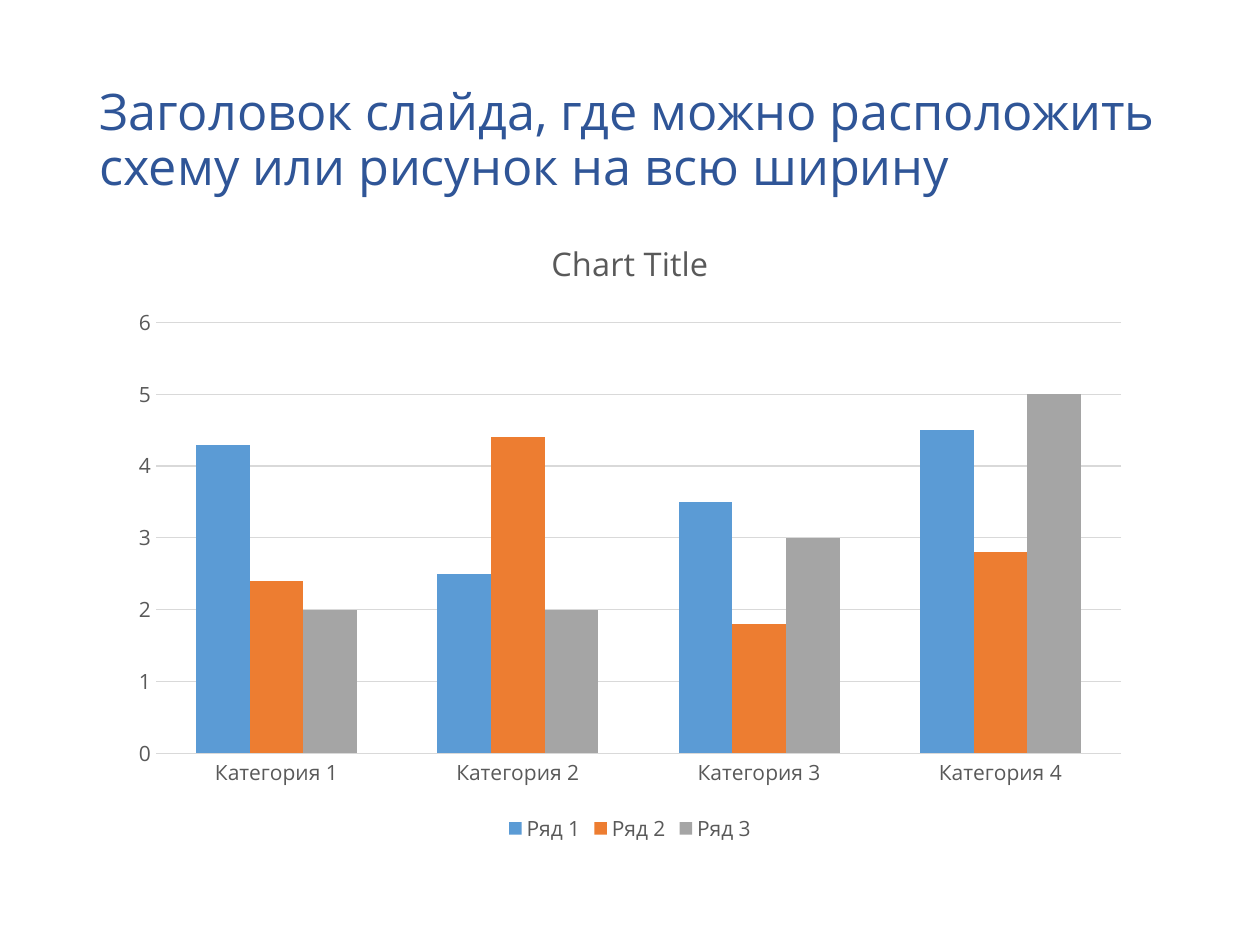
from dataclasses import dataclass

from pptx import Presentation
from pptx.chart.data import CategoryChartData
from pptx.dml.color import RGBColor
from pptx.enum.chart import XL_CHART_TYPE, XL_LEGEND_POSITION, XL_TICK_MARK
from pptx.enum.text import MSO_ANCHOR, MSO_AUTO_SIZE, PP_ALIGN
from pptx.util import Inches, Pt

COLUMNS = XL_CHART_TYPE.COLUMN_CLUSTERED
BOTTOM = XL_LEGEND_POSITION.BOTTOM
NO_TICK = XL_TICK_MARK.NONE
MIDDLE = MSO_ANCHOR.MIDDLE
NO_FIT = MSO_AUTO_SIZE.NONE
LEFT = PP_ALIGN.LEFT
TITLE_ONLY = 5


@dataclass(frozen=True)
class Theme:
    font: str = "Open Sans"
    title: str = "2F5597"
    label: str = "595959"
    grid: str = "D9D9D9"
    series: tuple = ("5B9BD5", "ED7D31", "A5A5A5")
    title_size: float = 28.8
    chart_title_size: float = 18.6
    label_size: float = 12
    grid_width: float = 0.75


THEME = Theme()
TITLE = "Заголовок слайда, где можно расположить схему или рисунок на всю ширину"
CHART_TITLE = "Chart Title"
CATEGORIES = [f"Категория {n}" for n in range(1, 5)]
SERIES = {
    "Ряд 1": (4.3, 2.5, 3.5, 4.5),
    "Ряд 2": (2.4, 4.4, 1.8, 2.8),
    "Ряд 3": (2, 2, 3, 5),
}


def rgb(color):
    return RGBColor.from_string(color)


def format_font(font, size, color):
    font.name = THEME.font
    font.size = Pt(size)
    font.bold = False
    font.color.rgb = rgb(color)


def write_text(tf, text, size, color, align=None, line_spacing=None):
    p = tf.paragraphs[0]
    p.alignment = align
    p.line_spacing = line_spacing
    r = p.add_run()
    r.text = text
    format_font(r.font, size, color)


def place_title(s, box):
    sp = s.shapes.title
    sp.left, sp.top, sp.width, sp.height = box
    tf = sp.text_frame
    tf.word_wrap = True
    tf.auto_size = NO_FIT
    tf.vertical_anchor = MIDDLE
    write_text(tf, TITLE, THEME.title_size, THEME.title,
               align=LEFT, line_spacing=0.9)


def format_axis(axis):
    axis.major_tick_mark = axis.minor_tick_mark = NO_TICK
    axis.format.line.fill.background()
    format_font(axis.tick_labels.font, THEME.label_size, THEME.label)


def place_chart(s, box):
    data = CategoryChartData()
    data.categories = CATEGORIES
    for name, values in SERIES.items():
        data.add_series(name, values)
    chart = s.shapes.add_chart(COLUMNS, *box, data).chart
    format_font(chart.font, THEME.label_size, THEME.label)

    chart.has_title = True
    write_text(chart.chart_title.text_frame, CHART_TITLE,
               THEME.chart_title_size, THEME.label)
    chart.chart_title.include_in_layout = False

    chart.has_legend = True
    chart.legend.position = BOTTOM
    chart.legend.include_in_layout = False
    format_font(chart.legend.font, THEME.label_size, THEME.label)

    format_axis(chart.category_axis)
    format_axis(chart.value_axis)
    chart.value_axis.has_major_gridlines = True
    line = chart.value_axis.major_gridlines.format.line
    line.color.rgb = rgb(THEME.grid)
    line.width = Pt(THEME.grid_width)

    plot = chart.plots[0]
    plot.gap_width = 150
    plot.overlap = 0
    plot.vary_by_categories = False
    for series, color in zip(plot.series, THEME.series):
        series.format.fill.solid()
        series.format.fill.fore_color.rgb = rgb(color)


def main():
    prs = Presentation()
    prs.slide_width, prs.slide_height = Inches(10), Inches(7.5)
    s = prs.slides.add_slide(prs.slide_layouts[TITLE_ONLY])
    place_title(s, [Inches(v) for v in (0.69, 0.4, 8.62, 1.45)])
    place_chart(s, [Inches(v) for v in (0.94, 1.68, 8.12, 5.05)])
    prs.save("out.pptx")


if __name__ == "__main__":
    main()
